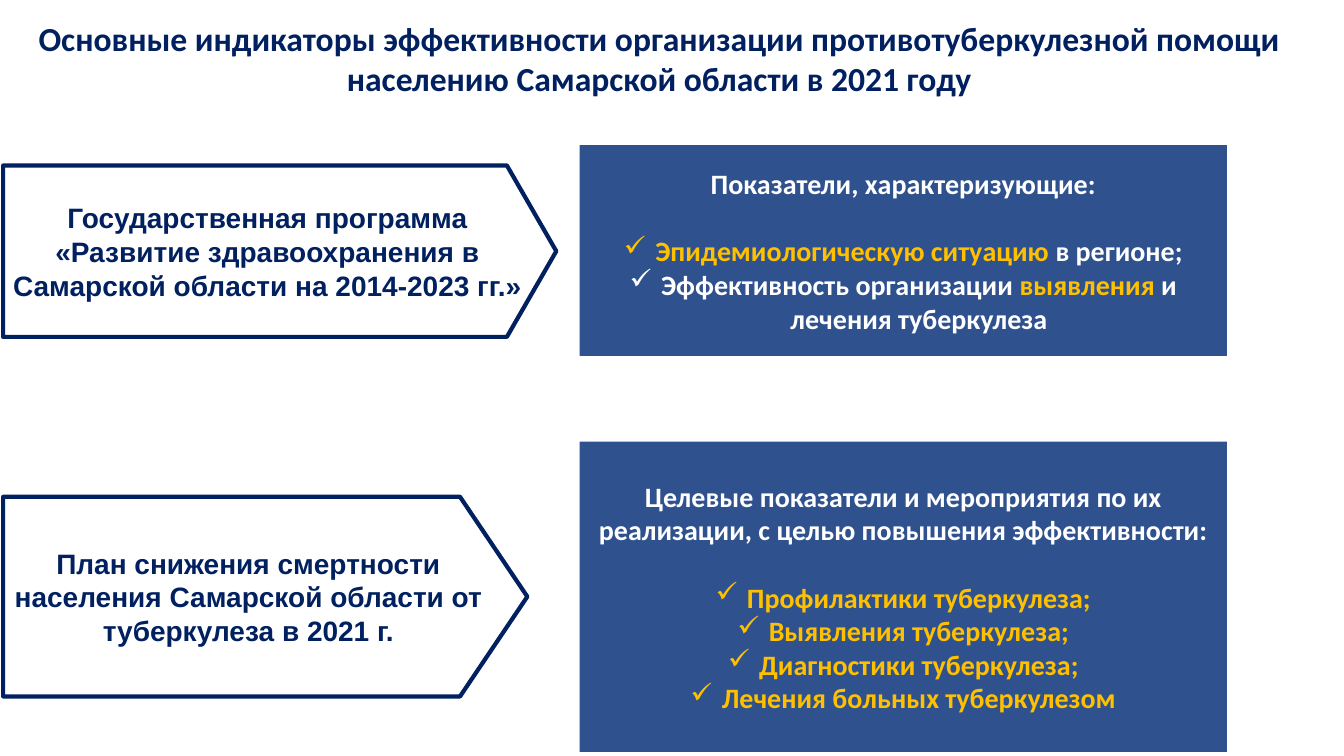
from lxml import etree
from pptx import Presentation
from pptx.dml.color import RGBColor
from pptx.enum.shapes import MSO_SHAPE
from pptx.enum.text import MSO_ANCHOR, MSO_AUTO_SIZE, PP_ALIGN
from pptx.oxml.ns import qn
from pptx.util import Cm, Pt

ARROW, RECT = MSO_SHAPE.PENTAGON, MSO_SHAPE.RECTANGLE
MIDDLE, CENTER, NO_FIT = MSO_ANCHOR.MIDDLE, PP_ALIGN.CENTER, MSO_AUTO_SIZE.NONE
NAVY, BLUE, WHITE, GOLD = "002060", "2F528F", "FFFFFF", "FFC000"


def paint(target, color):
    """Colour a font directly, or a fill after making it solid."""
    if hasattr(target, "solid"):
        target.solid()
        target.fore_color.rgb = RGBColor.from_string(color)
    else:
        target.color.rgb = RGBColor.from_string(color)


def write(para, runs, font, size):
    """Fill a centred bold paragraph with (text, colour) runs."""
    para.alignment = CENTER
    para.font.name, para.font.size, para.font.bold = font, Pt(size), True
    for text, color in runs:
        run = para.add_run()
        run.text = text
        paint(run.font, color)


deck = Presentation()
deck.slide_width, deck.slide_height = Cm(33.87), Cm(19.05)
slide = deck.slides.add_slide(deck.slide_layouts[5])

title = slide.shapes.title
title.left, title.top, title.width, title.height = Cm(0.08), Cm(0.48), Cm(33.07), Cm(1.98)
frame = title.text_frame
frame.auto_size, frame.vertical_anchor, frame.word_wrap = NO_FIT, MIDDLE, True
write(frame.paragraphs[0], [(
    "Основные индикаторы эффективности организации противотуберкулезной "
    "помощи населению Самарской области в 2021 году", NAVY)], "Calibri", 24)

# Programmes on the left: top, width, height, point depth, text
arrows = [
    (4.17, 13.94, 4.32, 0.288,
     "Государственная программа «Развитие здравоохранения в Самарской области на 2014-2023 гг.»"),
    (12.52, 13.21, 5.03, 0.337,
     "План снижения смертности населения Самарской области от туберкулеза в 2021 г."),
]
for top, width, height, depth, text in arrows:
    arrow = slide.shapes.add_shape(ARROW, Cm(0.08), Cm(top), Cm(width), Cm(height))
    arrow.adjustments[0] = depth
    arrow.shadow.inherit = False
    arrow.fill.background()
    paint(arrow.line.fill, NAVY)
    arrow.line.width = Pt(3)
    frame = arrow.text_frame
    frame.word_wrap, frame.vertical_anchor = True, MIDDLE
    frame.margin_left = frame.margin_right = Cm(0.24)
    write(frame.paragraphs[0], [(text, NAVY)], "Arial", 20)

# Indicators on the right: top, height, heading, checked items
boxes = [
    (3.66, 5.31, "Показатели, характеризующие:", [
        [("Эпидемиологическую ситуацию ", GOLD), ("в регионе;", WHITE)],
        [("Эффективность организации ", WHITE), ("выявления", GOLD),
         (" и лечения туберкулеза", WHITE)],
    ]),
    (11.13, 7.82,
     "Целевые показатели и мероприятия по их реализации, с целью повышения эффективности:", [
         [("Профилактики туберкулеза;", GOLD)],
         [("Выявления туберкулеза;", GOLD)],
         [("Диагностики туберкулеза;", GOLD)],
         [("Лечения больных туберкулезом", GOLD)],
     ]),
]
for top, height, head, items in boxes:
    box = slide.shapes.add_shape(RECT, Cm(14.61), Cm(top), Cm(16.31), Cm(height))
    box.shadow.inherit = False
    paint(box.fill, BLUE)
    box.line.fill.background()
    frame = box.text_frame
    frame.word_wrap, frame.vertical_anchor = True, MIDDLE
    first = frame.paragraphs[0]
    write(first, [(head, WHITE)], "Calibri", 20)
    first.space_after = Pt(24)
    for runs in items:
        para = frame.add_paragraph()
        write(para, runs, "Calibri", 20)
        props = para._p.get_or_add_pPr()
        props.set("marL", str(Cm(0.79)))
        props.set("indent", str(-Cm(0.79)))
        mark = etree.Element(qn("a:buChar"), char="✓")
        props.find(qn("a:defRPr")).addprevious(mark)

deck.save("out.pptx")
